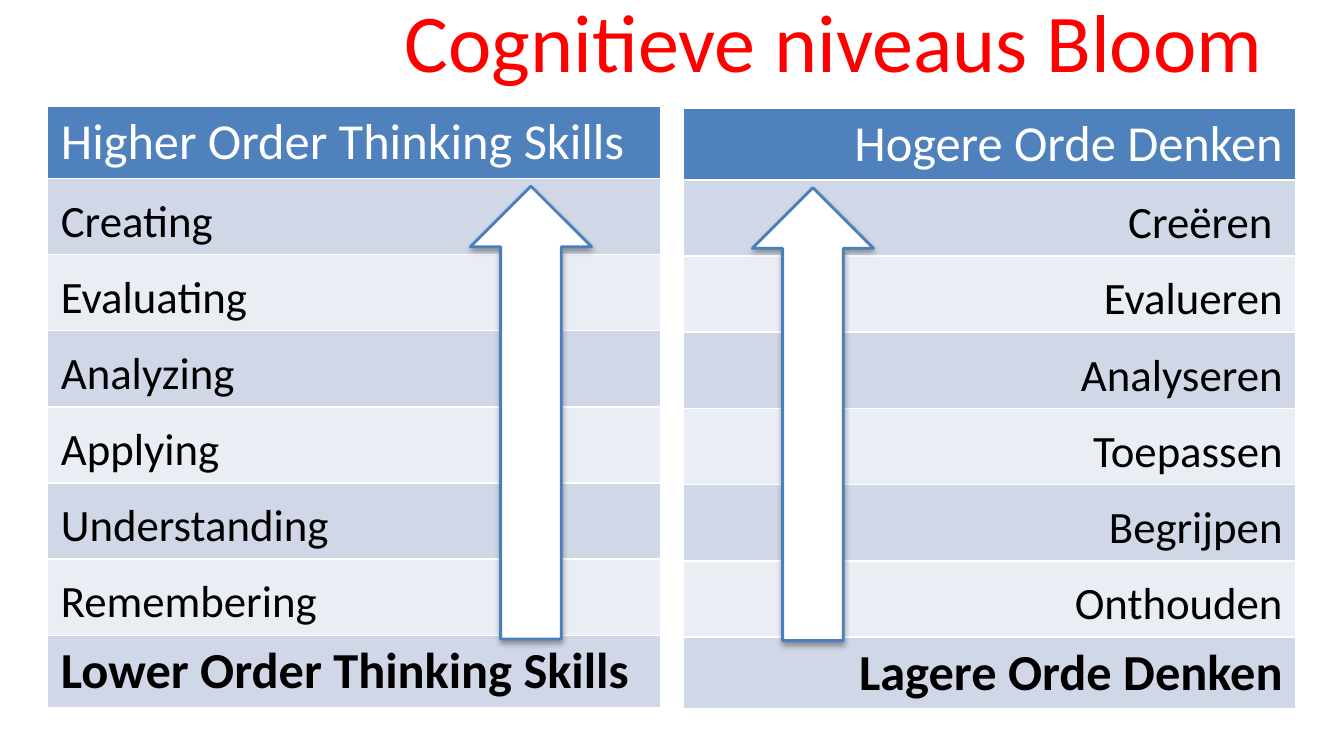
from dataclasses import dataclass

from lxml.etree import SubElement as Sub
from pptx import Presentation
from pptx.dml.color import RGBColor
from pptx.enum.shapes import MSO_SHAPE as Shape
from pptx.enum.text import MSO_ANCHOR as Anchor, MSO_AUTO_SIZE as Fit, PP_ALIGN as Align
from pptx.oxml.ns import qn
from pptx.slide import Slide
from pptx.table import _Cell as Cell
from pptx.util import Cm, Pt

RED = RGBColor(0xFF, 0x00, 0x00)
WHITE = RGBColor(0xFF, 0xFF, 0xFF)
BLACK = RGBColor(0x00, 0x00, 0x00)
BLUE = RGBColor(0x4F, 0x81, 0xBD)
EDGE = RGBColor(0x4B, 0x7E, 0xBC)
DARK = RGBColor(0xD0, 0xD8, 0xE8)
LIGHT = RGBColor(0xE9, 0xED, 0xF4)
FONT = "Calibri"
WIDTH = Cm(11.58)
END_ROW, MID_ROW = Cm(1.33), Cm(1.43)


@dataclass
class Panel:
    left: float
    top: float
    arrow: float
    align: Align
    rows: list[str]


PANELS = [
    Panel(12.91, 2.04, 14.22, Align.RIGHT, [
        "Hogere Orde Denken", "Creëren ", "Evalueren", "Analyseren",
        "Toepassen", "Begrijpen", "Onthouden", "Lagere Orde Denken"]),
    Panel(0.9, 2.01, 8.89, Align.LEFT, [
        "Higher Order Thinking Skills", "Creating", "Evaluating", "Analyzing",
        "Applying", "Understanding", "Remembering", "Lower Order Thinking Skills"]),
]


def add_run(para, text: str, size: int, color: RGBColor, bold: bool = False) -> None:
    run = para.add_run()
    run.text = text
    font = run.font
    font.name, font.size, font.bold = FONT, Pt(size), bold
    font.color.rgb = color


def add_edges(cell: Cell) -> None:
    props = cell._tc.get_or_add_tcPr()
    for side in ("lnL", "lnR", "lnT", "lnB"):
        line = Sub(props, qn(f"a:{side}"), w=str(Pt(1)))
        Sub(Sub(line, qn("a:solidFill")), qn("a:srgbClr"), val=str(WHITE))


def add_panel(slide: Slide, panel: Panel) -> None:
    last = len(panel.rows) - 1
    high = 2 * END_ROW + (last - 1) * MID_ROW
    table = slide.shapes.add_table(
        last + 1, 1, Cm(panel.left), Cm(panel.top), WIDTH, high).table
    for row, text in enumerate(panel.rows):
        end = row in (0, last)
        table.rows[row].height = END_ROW if end else MID_ROW
        cell = table.cell(row, 0)
        add_edges(cell)
        cell.fill.solid()
        cell.fill.fore_color.rgb = BLUE if row == 0 else DARK if row % 2 else LIGHT
        cell.margin_left = cell.margin_right = Cm(0.25)
        cell.margin_top = cell.margin_bottom = Cm(0.1)
        para = cell.text_frame.paragraphs[0]
        para.alignment = panel.align
        if not end:
            para.line_spacing = 1.2
        add_run(para, text, 27 if end else 24, BLACK if row else WHITE, row == last)


def add_arrow(slide: Slide, panel: Panel) -> None:
    arrow = slide.shapes.add_shape(
        Shape.UP_ARROW, Cm(panel.arrow), Cm(panel.top + 1.51), Cm(2.29), Cm(8.56))
    arrow.fill.solid()
    arrow.fill.fore_color.rgb = WHITE
    arrow.line.color.rgb = EDGE
    arrow.line.width = Pt(1.5)
    arrow.shadow.inherit = False
    glow = arrow._element.spPr.find(qn("a:effectLst"))
    shade = Sub(glow, qn("a:outerShdw"), blurRad=str(Pt(3.1)), dist=str(Pt(1.8)),
                dir="5400000", rotWithShape="0")
    tint = Sub(shade, qn("a:srgbClr"), val=str(BLACK))
    Sub(tint, qn("a:alpha"), val="35000")


def add_title(slide: Slide, text: str) -> None:
    title = slide.shapes.title
    title.left, title.top = Cm(2.39), Cm(-0.2)
    title.width, title.height = Cm(21.74), Cm(1.9)
    frame = title.text_frame
    frame.auto_size = Fit.NONE
    frame.vertical_anchor = Anchor.MIDDLE
    para = frame.paragraphs[0]
    para.alignment = Align.RIGHT
    add_run(para, text, 44, RED)


def main() -> None:
    deck = Presentation()
    deck.slide_width, deck.slide_height = Cm(25.4), Cm(14.29)
    slide = deck.slides.add_slide(deck.slide_layouts[5])
    add_title(slide, "Cognitieve niveaus Bloom")
    for panel in PANELS:
        add_panel(slide, panel)
        add_arrow(slide, panel)
    deck.save("out.pptx")


if __name__ == "__main__":
    main()
